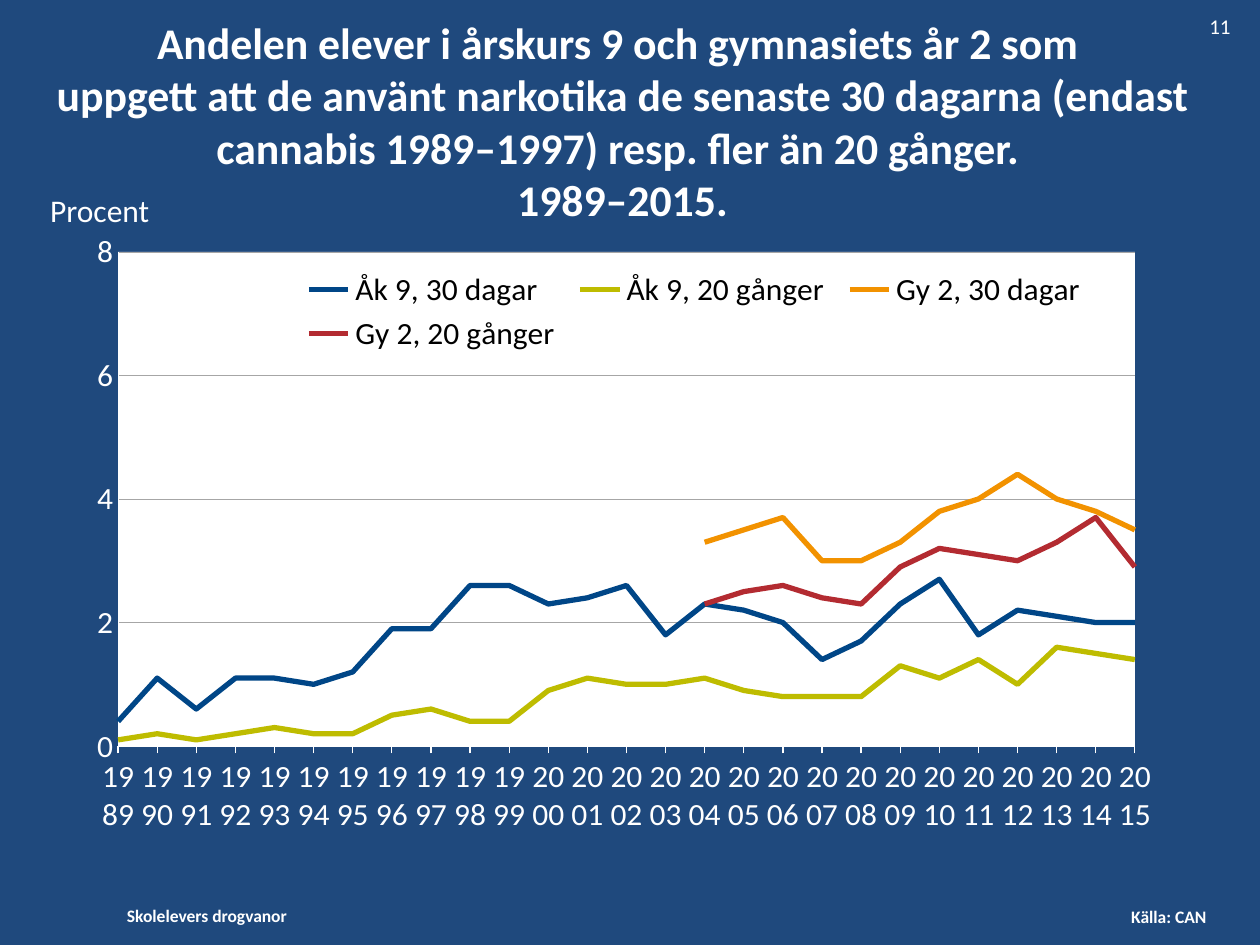
from dataclasses import dataclass

import pptx
import pptx.chart.data
import pptx.dml.color
import pptx.enum.chart
import pptx.enum.text
import pptx.oxml
import pptx.oxml.ns
import pptx.util

Inches = pptx.util.Inches
Pt = pptx.util.Pt
qn = pptx.oxml.ns.qn


@dataclass(frozen=True)
class Theme:
    """Hold the colours, font and type sizes of the slide."""
    background: str = "1F497D"
    text: str = "FFFFFF"
    plot: str = "FFFFFF"
    legend: str = "000000"
    grid: str = "A6A6A6"
    font: str = "Calibri"
    title_size: float = 25
    chart_size: float = 18
    number_size: float = 12
    footer_size: float = 10


THEME = Theme()
YEARS = [str(year) for year in range(1989, 2016)]
SERIES = [
    ("Åk 9, 30 dagar", "004687",
     [0.4, 1.1, 0.6, 1.1, 1.1, 1, 1.2, 1.9, 1.9, 2.6, 2.6, 2.3, 2.4, 2.6,
      1.8, 2.3, 2.2, 2, 1.4, 1.7, 2.3, 2.7, 1.8, 2.2, 2.1, 2, 2]),
    ("Åk 9, 20 gånger", "BEBC00",
     [0.1, 0.2, 0.1, 0.2, 0.3, 0.2, 0.2, 0.5, 0.6, 0.4, 0.4, 0.9, 1.1, 1,
      1, 1.1, 0.9, 0.8, 0.8, 0.8, 1.3, 1.1, 1.4, 1, 1.6, 1.5, 1.4]),
    ("Gy 2, 30 dagar", "F29200",
     [3.3, 3.5, 3.7, 3, 3, 3.3, 3.8, 4, 4.4, 4, 3.8, 3.5]),
    ("Gy 2, 20 gånger", "B32B31",
     [2.3, 2.5, 2.6, 2.4, 2.3, 2.9, 3.2, 3.1, 3, 3.3, 3.7, 2.9]),
]
TITLE = (
    "Andelen elever i årskurs 9 och gymnasiets år 2 som \n"
    "uppgett att de använt narkotika de senaste 30 dagarna (endast "
    "cannabis 1989–1997) resp. fler än 20 gånger. \n1989–2015."
)


def rgb(value):
    """Return a colour from its hex digits."""
    return pptx.dml.color.RGBColor.from_string(value)


def style_font(font, size, color=THEME.text, bold=False):
    """Apply the theme font with a size, colour and weight."""
    font.name = THEME.font
    font.size = Pt(size)
    font.bold = bold
    font.color.rgb = rgb(color)


def style_line(line, color, width):
    """Give a line a solid colour and a width in points."""
    line.color.rgb = rgb(color)
    line.width = Pt(width)


def add_text(s, box, text, size, bold=False, wrap=True, centered=False, middle=False):
    """Place one paragraph of text in the given box."""
    tf = s.shapes.add_textbox(*map(Inches, box)).text_frame
    tf.word_wrap = wrap
    if middle:
        tf.vertical_anchor = pptx.enum.text.MSO_ANCHOR.MIDDLE
    p = tf.paragraphs[0]
    p.text = text
    if centered:
        p.alignment = pptx.enum.text.PP_ALIGN.CENTER
    for r in p.runs:
        style_font(r.font, size, bold=bold)


def manual_layout(x, y, w, h, inner=False):
    """Return a layout element placed by fractions of the chart."""
    target = '<c:layoutTarget val="inner"/>' if inner else ""
    return pptx.oxml.parse_xml(
        f'<c:layout {pptx.oxml.ns.nsdecls("c")}><c:manualLayout>{target}'
        '<c:xMode val="edge"/><c:yMode val="edge"/>'
        f'<c:x val="{x}"/><c:y val="{y}"/><c:w val="{w}"/><c:h val="{h}"/>'
        "</c:manualLayout></c:layout>"
    )


def style_plot_area(chart):
    """Fix the inner plot area and fill it."""
    area = chart._chartSpace.find(".//" + qn("c:plotArea"))
    for old in area.findall(qn("c:layout")):
        area.remove(old)
    area.insert(0, manual_layout(0.062, 0.089, 0.914, 0.794, inner=True))
    area.append(pptx.oxml.parse_xml(
        f'<c:spPr {pptx.oxml.ns.nsdecls("c", "a")}><a:solidFill>'
        f'<a:srgbClr val="{THEME.plot}"/></a:solidFill></c:spPr>'
    ))


def style_axes(chart):
    """Set the scales, ticks, labels and lines of both axes."""
    tick = pptx.enum.chart.XL_TICK_MARK
    cat, val = chart.category_axis, chart.value_axis
    for axis, mark, width in ((cat, tick.OUTSIDE, 0.75), (val, tick.NONE, 0.23)):
        axis.major_tick_mark = mark
        axis.minor_tick_mark = tick.NONE
        style_font(axis.tick_labels.font, THEME.chart_size)
        style_line(axis.format.line, THEME.text, width)
    body = cat._element.find(qn("c:txPr")).find(qn("a:bodyPr"))
    body.set("rot", "0")
    body.set("vert", "horz")
    val.minimum_scale, val.maximum_scale, val.major_unit = 0, 8, 2
    val.tick_labels.number_format = "0"
    val.tick_labels.number_format_is_linked = False
    val.has_major_gridlines = True
    style_line(val.major_gridlines.format.line, THEME.grid, 0.23)
    for old in val._element.findall(qn("c:crossBetween")):
        val._element.remove(old)
    val._element.find(qn("c:crosses")).addnext(pptx.oxml.parse_xml(
        f'<c:crossBetween {pptx.oxml.ns.nsdecls("c")} val="midCat"/>'
    ))


def style_legend(chart):
    """Place the legend inside the top of the plot area."""
    chart.has_legend = True
    legend = chart.legend
    legend.position = pptx.enum.chart.XL_LEGEND_POSITION.TOP
    legend.include_in_layout = False
    style_font(legend.font, THEME.chart_size, THEME.legend)
    for old in legend._element.findall(qn("c:layout")):
        legend._element.remove(old)
    legend._element.find(qn("c:legendPos")).addnext(
        manual_layout(0.22, 0.11, 0.72, 0.15)
    )


def add_line_chart(s, box):
    """Draw the four trend lines in the given box."""
    data = pptx.chart.data.CategoryChartData()
    data.categories = YEARS
    for name, _, values in SERIES:
        data.add_series(name, [None] * (len(YEARS) - len(values)) + values)
    chart = s.shapes.add_chart(
        pptx.enum.chart.XL_CHART_TYPE.LINE, *map(Inches, box), data
    ).chart
    chart.has_title = False
    style_font(chart.font, THEME.chart_size)
    chart.plots[0].vary_by_categories = False
    for series, (_, color, _) in zip(chart.plots[0].series, SERIES):
        series.smooth = False
        series.marker.style = pptx.enum.chart.XL_MARKER_STYLE.NONE
        style_line(series.format.line, color, 3)
    style_plot_area(chart)
    style_axes(chart)
    style_legend(chart)


def add_footer(s, left_box, right_box):
    """Write the report name and the source at the foot of the slide."""
    for box, text in ((left_box, "Skolelevers drogvanor"), (right_box, "Källa: CAN")):
        add_text(s, box, text, THEME.footer_size, bold=True, wrap=False)


def main():
    """Build the slide and save it."""
    prs = pptx.Presentation()
    prs.slide_width, prs.slide_height = Inches(10), Inches(7.5)
    s = prs.slides.add_slide(prs.slide_layouts[6])
    s.background.fill.solid()
    s.background.fill.fore_color.rgb = rgb(THEME.background)
    add_footer(s, (0.91, 7.13, 1.67, 0.27), (8.88, 7.14, 0.94, 0.27))
    add_text(s, (0.02, 0.44, 9.84, 1.03), TITLE, THEME.title_size,
             bold=True, centered=True, middle=True)
    add_line_chart(s, (0.39, 1.56, 8.83, 5.05))
    add_text(s, (0.3, 1.47, 1.1, 0.4), "Procent", THEME.chart_size, middle=True)
    add_text(s, (9.5, 0.06, 0.5, 0.3), "11", THEME.number_size)
    prs.save("out.pptx")


if __name__ == "__main__":
    main()
